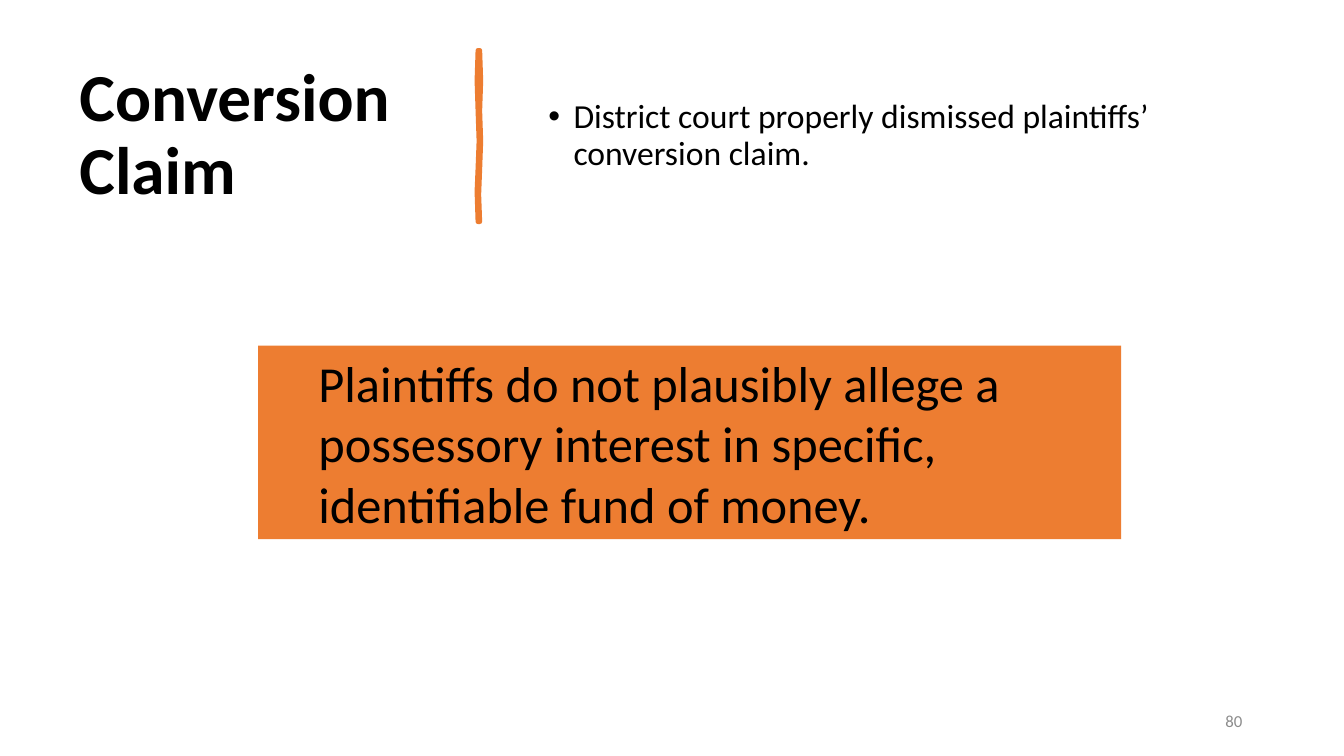
import pptx
import pptx.util
import pptx.dml.color
import pptx.enum.shapes
import pptx.enum.text
import lxml.etree

Inches, Pt = pptx.util.Inches, pptx.util.Pt
RGB = pptx.dml.color.RGBColor.from_string
ALIGN = pptx.enum.text.PP_ALIGN
MIDDLE = pptx.enum.text.MSO_ANCHOR.MIDDLE

THEME = {
    "font": "Calibri", "text": "000000", "muted": "8C8C8C", "accent": "ED7D31",
    "title": 48, "body": 24, "callout": 36, "number": 12, "divider": 3.25,
}
TEXTS = [
    {"text": "Conversion Claim", "at": (0.69, 0.55, 3.74, 1.6),
     "size": "title", "bold": True, "spacing": 0.9},
    {"text": "District court properly dismissed plaintiffs’ conversion claim.",
     "at": (5.09, 0.55, 7.54, 1.6), "size": "body", "spacing": 0.9,
     "margin": 0.5, "indent": -0.25, "bullet": "•"},
    {"text": "80", "at": (9.42, 6.95, 3, 0.4), "size": "number",
     "color": "muted", "align": ALIGN.RIGHT},
    {"text": "Plaintiffs do not plausibly allege a possessory interest in "
             "specific, identifiable fund of money.",
     "at": (2.56, 3.43, 8.56, 1.92), "size": "callout",
     "margin": 0.5, "fill": "accent"},
]
DIVIDER = [
    (4.76, 0.5), (4.77, 0.8), (4.76, 1.1), (4.77, 1.4), (4.76, 1.68),
    (4.75, 1.93), (4.76, 2.2), (4.74, 2.2), (4.73, 1.9), (4.74, 1.67),
    (4.75, 1.4), (4.74, 1.1), (4.73, 0.8), (4.74, 0.5),
]


def add_text(slide, item):
    box = [Inches(v) for v in item["at"]]
    if "fill" in item:
        sp = slide.shapes.add_shape(pptx.enum.shapes.MSO_SHAPE.RECTANGLE, *box)
        sp.shadow.inherit = False
        sp.fill.solid()
        sp.fill.fore_color.rgb = RGB(THEME[item["fill"]])
        sp.line.fill.background()
    else:
        sp = slide.shapes.add_textbox(*box)
    tf = sp.text_frame
    tf.word_wrap = True
    tf.vertical_anchor = MIDDLE
    p = tf.paragraphs[0]
    p.alignment = item.get("align", ALIGN.LEFT)
    p.line_spacing = item.get("spacing", 1.0)
    pPr = p._p.get_or_add_pPr()
    pPr.set("marL", str(Inches(item.get("margin", 0))))
    pPr.set("indent", str(Inches(item.get("indent", 0))))
    if "bullet" in item:
        ns = pptx.oxml.ns.qn
        lxml.etree.SubElement(pPr, ns("a:buFont")).set("typeface", "Arial")
        lxml.etree.SubElement(pPr, ns("a:buChar")).set("char", item["bullet"])
    r = p.add_run()
    r.text = item["text"]
    r.font.name = THEME["font"]
    r.font.size = Pt(THEME[item["size"]])
    r.font.bold = item.get("bold", False)
    r.font.color.rgb = RGB(THEME[item.get("color", "text")])


def add_divider(slide):
    points = [(Inches(x), Inches(y)) for x, y in DIVIDER]
    builder = slide.shapes.build_freeform(*points[0])
    builder.add_line_segments(points[1:], close=True)
    sp = builder.convert_to_shape()
    sp.shadow.inherit = False
    sp.fill.solid()
    sp.fill.fore_color.rgb = RGB(THEME["accent"])
    sp.line.color.rgb = RGB(THEME["accent"])
    sp.line.width = Pt(THEME["divider"])
    lxml.etree.SubElement(sp.line._get_or_add_ln(), pptx.oxml.ns.qn("a:round"))


def main():
    prs = pptx.Presentation()
    prs.slide_width, prs.slide_height = Inches(13.33), Inches(7.5)
    slide = prs.slides.add_slide(prs.slide_layouts[6])
    add_divider(slide)
    for item in TEXTS:
        add_text(slide, item)
    prs.save("out.pptx")


if __name__ == "__main__":
    main()
